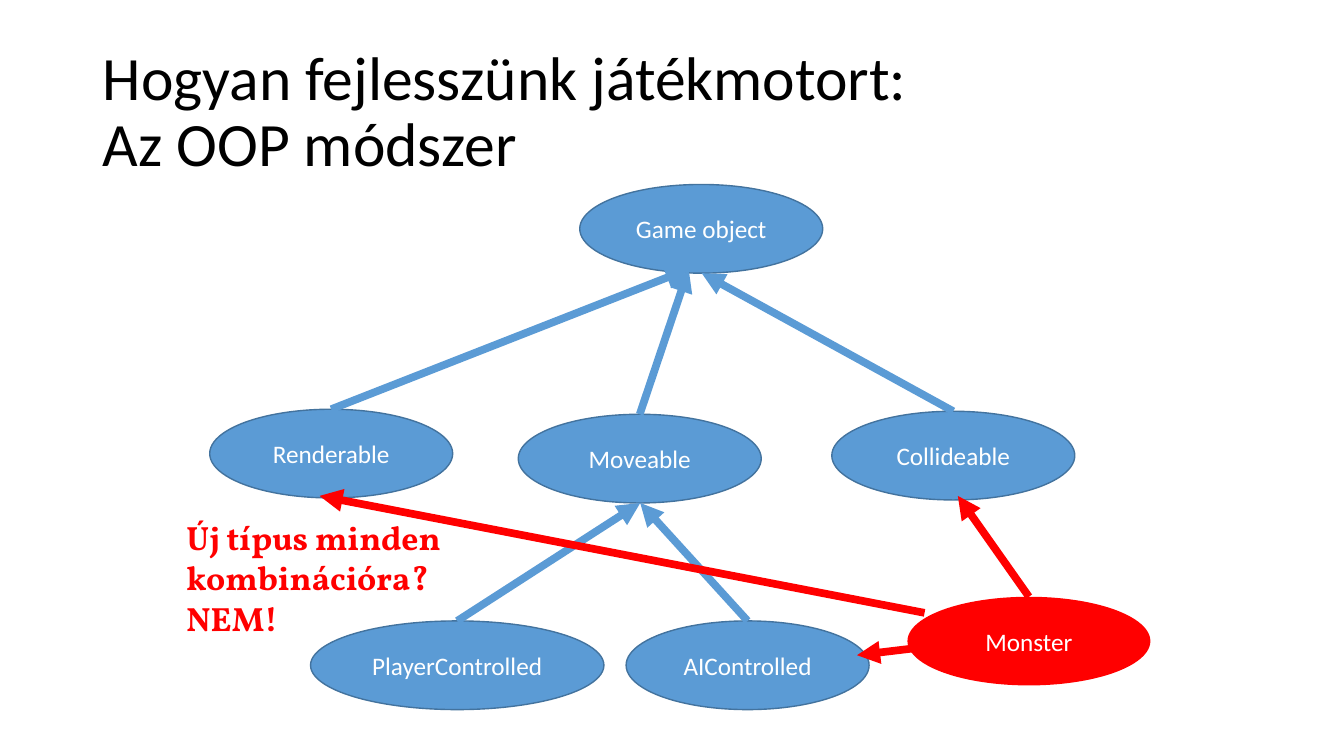
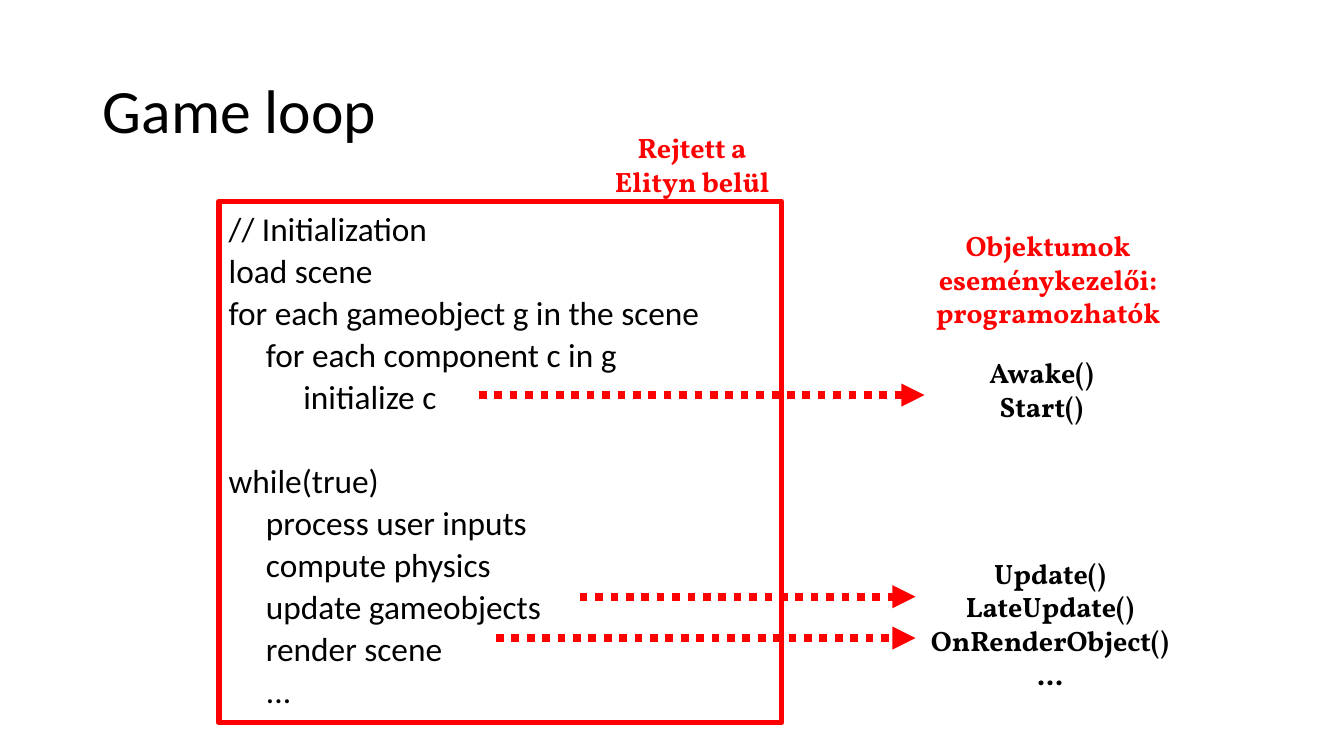
from lxml import etree
from pptx import Presentation
from pptx.dml.color import RGBColor
from pptx.enum.dml import MSO_LINE
from pptx.enum.shapes import MSO_CONNECTOR, MSO_SHAPE
from pptx.enum.text import MSO_ANCHOR, MSO_AUTO_SIZE, PP_ALIGN
from pptx.oxml.ns import qn
from pptx.util import Pt

PX = 9144  # EMU per px, 100 px to the inch
BLUE, EDGE, RED, BLACK, WHITE = "5B9BD5", "43739E", "FF0000", "000000", "FFFFFF"
BODY, ACCENT = "Calibri", "Vollkorn"
rgb = RGBColor.from_string


def write(sp, lines, size, color, font=BODY, bold=False,
          align=PP_ALIGN.LEFT, anchor=MSO_ANCHOR.TOP):
    """Fill a shape with one paragraph per line and format every run."""
    tf = sp.text_frame
    tf.text = "\n".join(lines)
    tf.word_wrap = True
    tf.auto_size = MSO_AUTO_SIZE.NONE
    tf.vertical_anchor = anchor
    for p in tf.paragraphs:
        p.alignment = align
        for r in p.runs:
            r.font.size = Pt(size)
            r.font.name = font
            r.font.bold = bold
            r.font.color.rgb = rgb(color)
    return tf.paragraphs


def add_arrow(s, start, end, color):
    """Draw a thick straight arrow pointing at end."""
    cx = s.shapes.add_connector(MSO_CONNECTOR.STRAIGHT,
                                *(v * PX for v in (*start, *end)))
    cx.line.color.rgb = rgb(color)
    cx.line.width = Pt(5.5)
    ln = cx.line._get_or_add_ln()
    etree.SubElement(ln, qn("a:tailEnd"), type="triangle")
    etree.SubElement(cx._element.spPr, qn("a:effectLst"))
    return cx


prs = Presentation()
prs.slide_width, prs.slide_height = 1333 * PX, 750 * PX

# Slides with their titles
slides = []
for title in ("Hogyan fejlesszünk játékmotort: \vAz OOP módszer", "Game loop"):
    s = prs.slides.add_slide(prs.slide_layouts[5])
    sp = s.shapes.title
    sp.left, sp.top, sp.width, sp.height = (v * PX for v in (92, 40, 1150, 145))
    for p in write(sp, [title], 44, BLACK, anchor=MSO_ANCHOR.MIDDLE):
        p.line_spacing = 0.9
    slides.append(s)
hierarchy, game_loop = slides

# Class hierarchy: name, left, top, width, fill
classes = [
    ("Game object", 575, 183, 241, BLUE),
    ("Renderable", 208, 406, 241, BLUE),
    ("Moveable", 514, 411, 241, BLUE),
    ("Collideable", 825, 408, 241, BLUE),
    ("PlayerControlled", 308, 616, 291, BLUE),
    ("AIControlled", 621, 616, 241, BLUE),
    ("Monster", 900, 592, 241, RED),
]
nodes = {}
for name, left, top, width, fill in classes:
    sp = hierarchy.shapes.add_shape(
        MSO_SHAPE.OVAL, left * PX, top * PX, width * PX, 88 * PX)
    sp.shadow.inherit = False
    sp.fill.solid()
    sp.fill.fore_color.rgb = rgb(fill)
    if fill == BLUE:
        sp.line.color.rgb = rgb(EDGE)
        sp.line.width = Pt(1)
    else:
        sp.line.fill.background()
    write(sp, [name], 18, WHITE, align=PP_ALIGN.CENTER, anchor=MSO_ANCHOR.MIDDLE)
    nodes[name] = sp

# Inheritance arrows leaving the top of each child
for child, end, color in [
    ("Renderable", (683, 267), BLUE),
    ("Moveable", (683, 267), BLUE),
    ("Collideable", (696, 271), BLUE),
    ("PlayerControlled", (635, 499), BLUE),
    ("AIControlled", (635, 499), BLUE),
    ("Monster", (950, 492), RED),
]:
    add_arrow(hierarchy, end, end, color).begin_connect(nodes[child], 0)

# Arrows leaving the side of Monster
add_arrow(hierarchy, (917, 642), (850, 650), RED)
add_arrow(hierarchy, (917, 608), (317, 492), RED)

# Game loop code: indent level, space before, text
code = [
    (0, 10, "// Initialization"),
    (0, 10, "load scene"),
    (0, 10, "for each gameobject g in the scene"),
    (1, 10, "for each component c in g"),
    (2, 10, "initialize c"),
    (0, 40, "while(true)"),
    (1, 10, "process user inputs"),
    (1, 10, "compute physics"),
    (1, 10, "update gameobjects"),
    (1, 10, "render scene"),
    (1, 10, "..."),
]
sp = game_loop.shapes.add_textbox(217 * PX, 212 * PX, 900 * PX, 513 * PX)
paragraphs = write(sp, [text for _, _, text in code], 23.8, BLACK)
for p, (level, before, _) in zip(paragraphs, code):
    p.line_spacing = 0.7
    p.space_before = Pt(before)
    p._p.get_or_add_pPr().set("marL", str(level * 37 * PX))

# Dotted arrows from code to event handlers
for left, right, y in [(475, 917, 392), (575, 908, 592), (492, 908, 633)]:
    add_arrow(game_loop, (left, y), (right, y), RED).line.dash_style = MSO_LINE.ROUND_DOT

# Frame around the hidden part
sp = game_loop.shapes.add_shape(
    MSO_SHAPE.RECTANGLE, 217 * PX, 200 * PX, 558 * PX, 517 * PX)
sp.shadow.inherit = False
sp.fill.background()
sp.line.color.rgb = rgb(RED)
sp.line.width = Pt(4)

# Bold notes on both slides
for s, box, lines, size, color, align in [
    (hierarchy, (175, 508, 325, 131), ["Új típus minden kombinációra? NEM!"],
     24, RED, PP_ALIGN.LEFT),
    (game_loop, (958, 348, 150, 77), ["Awake()", "Start()"],
     20, BLACK, PP_ALIGN.CENTER),
    (game_loop, (908, 547, 267, 145),
     ["Update()", "LateUpdate()", "OnRenderObject()", "..."],
     20, BLACK, PP_ALIGN.CENTER),
    (game_loop, (590, 125, 193, 77), ["Rejtett a Elityn belül"],
     20, RED, PP_ALIGN.CENTER),
    (game_loop, (897, 222, 285, 111), ["Objektumok eseménykezelői: programozhatók"],
     20, RED, PP_ALIGN.CENTER),
]:
    sp = s.shapes.add_textbox(*(v * PX for v in box))
    write(sp, lines, size, color, ACCENT, True, align)

prs.save("out.pptx")
